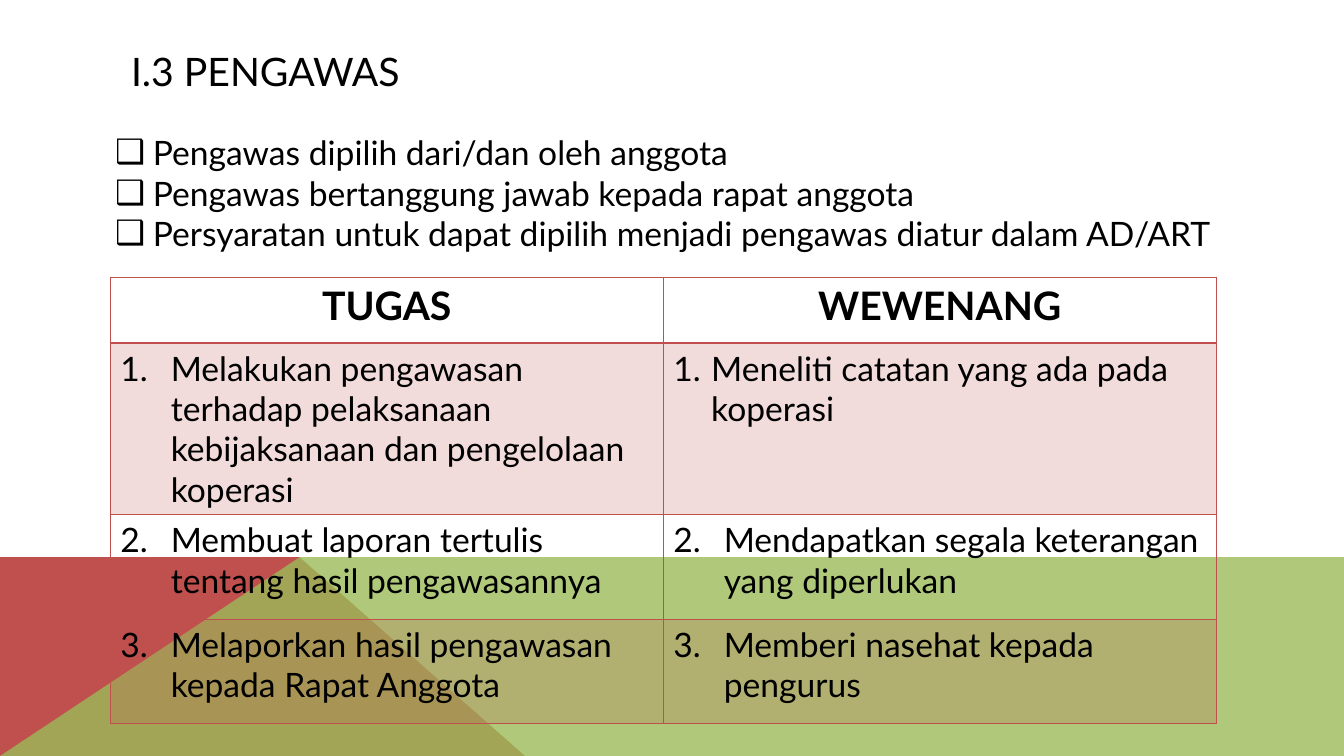
from lxml import etree
from pptx import Presentation
from pptx.dml.color import RGBColor
from pptx.enum import text
from pptx.oxml import ns
from pptx.util import Pt

# Content
TITLE = "I.3 PENGAWAS"
POINTS = [
    "Pengawas dipilih dari/dan oleh anggota",
    "Pengawas bertanggung jawab kepada rapat anggota",
    "Persyaratan untuk dapat dipilih menjadi pengawas diatur dalam AD/ART",
]
HEADERS = ("TUGAS", "WEWENANG")
DUTIES_AND_POWERS = [
    ("Melakukan pengawasan terhadap pelaksanaan kebijaksanaan dan pengelolaan koperasi",
     "Meneliti catatan yang ada pada koperasi"),
    ("Membuat laporan tertulis tentang hasil pengawasannya",
     "Mendapatkan segala keterangan yang diperlukan"),
    ("Melaporkan hasil pengawasan kepada Rapat Anggota",
     "Memberi nasehat kepada pengurus"),
]

# Theme and layout, in points
THEME = {"font": "Lato", "text": "000000", "red": "C0504D", "green": "9BBB59",
         "heading": 28, "body": 24, "line": 1, "header_line": 2}
WIDTH, HEIGHT = 960, 540
BAND_TOP = 397.6
BANDS = [  # outline, colour, opacity in percent
    ([(0, HEIGHT), (0, BAND_TOP), (214.4, BAND_TOP), (375, HEIGHT)], "red", 100),
    ([(0, HEIGHT), (214, BAND_TOP), (WIDTH, BAND_TOP), (WIDTH, HEIGHT)], "green", 80),
]
TITLE_BOX = (86.4, 28.8, 790, 43.2)
POINTS_BOX = (75, 90.8, 797.5, 94.3)
TABLE_BOX = (78.8, 198, 790, 319)
ROW_HEIGHTS = (47, 122.6, 74.7, 74.7)
WIDE_INDENT, NARROW_INDENT = 36, 27


def add_xml(parent, tag, **attributes):
    return etree.SubElement(parent, ns.qn(tag), attributes)


def apply_format(target, values):
    for name, value in values.items():
        setattr(target, name, value)


def place(shape, box):
    apply_format(shape, dict(zip(("left", "top", "width", "height"), map(Pt, box))))


def paint(fill, colour, opacity=100):
    fill.solid()
    fill.fore_color.rgb = RGBColor.from_string(THEME[colour])
    if opacity < 100:
        colour_element = fill._xPr.find(ns.qn("a:solidFill"))[0]
        add_xml(colour_element, "a:alpha", val=str(opacity * 1000))


def write(paragraph, words, size, bold=False, align=text.PP_ALIGN.LEFT):
    run = paragraph.add_run()
    run.text = words
    apply_format(paragraph, {"alignment": align, "space_before": Pt(0), "line_spacing": 1.0})
    apply_format(run.font, {"name": THEME["font"], "size": Pt(THEME[size]), "bold": bold})
    run.font.color.rgb = RGBColor.from_string(THEME["text"])


def add_bullet(paragraph, indent, tag, **attributes):
    properties = paragraph._p.get_or_add_pPr()
    properties.set("marL", str(Pt(indent)))
    properties.set("indent", str(-Pt(indent)))
    add_xml(properties, tag, **attributes)


def add_borders(cell, row):
    widths = {"L": "line", "R": "line",
              "T": "header_line" if row == 1 else "line",
              "B": "header_line" if row == 0 else "line"}
    for side, width in widths.items():
        line = add_xml(cell._tc.get_or_add_tcPr(), f"a:ln{side}", w=str(Pt(THEME[width])))
        add_xml(add_xml(line, "a:solidFill"), "a:srgbClr", val=THEME["red"])


def add_bands(slide):
    for outline, colour, opacity in BANDS:
        builder = slide.shapes.build_freeform(*outline[0], scale=Pt(1))
        builder.add_line_segments(outline[1:], close=True)
        band = builder.convert_to_shape()
        band.shadow.inherit = False
        band.line.fill.background()
        paint(band.fill, colour, opacity)


def add_duties_table(slide):
    rows = [HEADERS, *DUTIES_AND_POWERS]
    table = slide.shapes.add_table(len(rows), len(HEADERS), *map(Pt, TABLE_BOX)).table
    apply_format(table, {"first_row": True, "horz_banding": False})
    for row, words_in_row in enumerate(rows):
        table.rows[row].height = Pt(ROW_HEIGHTS[row])
        for column, words in enumerate(words_in_row):
            cell = table.cell(row, column)
            paragraph = cell.text_frame.paragraphs[0]
            add_borders(cell, row)
            if row % 2:
                paint(cell.fill, "red", 20)
            else:
                cell.fill.background()
            if row == 0:
                write(paragraph, words, "heading", True, text.PP_ALIGN.CENTER)
            else:
                write(paragraph, words, "body")
                indent = NARROW_INDENT if (row, column) == (1, 1) else WIDE_INDENT
                add_bullet(paragraph, indent, "a:buAutoNum",
                           type="arabicPeriod", startAt=str(row))


def main():
    presentation = Presentation()
    apply_format(presentation, {"slide_width": Pt(WIDTH), "slide_height": Pt(HEIGHT)})
    slide = presentation.slides.add_slide(presentation.slide_layouts[1])
    add_bands(slide)

    # Title
    title = slide.shapes.title
    place(title, TITLE_BOX)
    apply_format(title.text_frame, {"vertical_anchor": text.MSO_ANCHOR.MIDDLE,
                                    "auto_size": text.MSO_AUTO_SIZE.NONE})
    write(title.text_frame.paragraphs[0], TITLE, "heading")

    # Table
    add_duties_table(slide)

    # Bulleted points
    body = slide.placeholders[1]
    place(body, POINTS_BOX)
    frame = body.text_frame
    apply_format(frame, {"word_wrap": True, "auto_size": text.MSO_AUTO_SIZE.SHAPE_TO_FIT_TEXT})
    for index, point in enumerate(POINTS):
        paragraph = frame.add_paragraph() if index else frame.paragraphs[0]
        write(paragraph, point, "body")
        add_bullet(paragraph, NARROW_INDENT, "a:buChar", char="❑")

    presentation.save("out.pptx")


if __name__ == "__main__":
    main()
